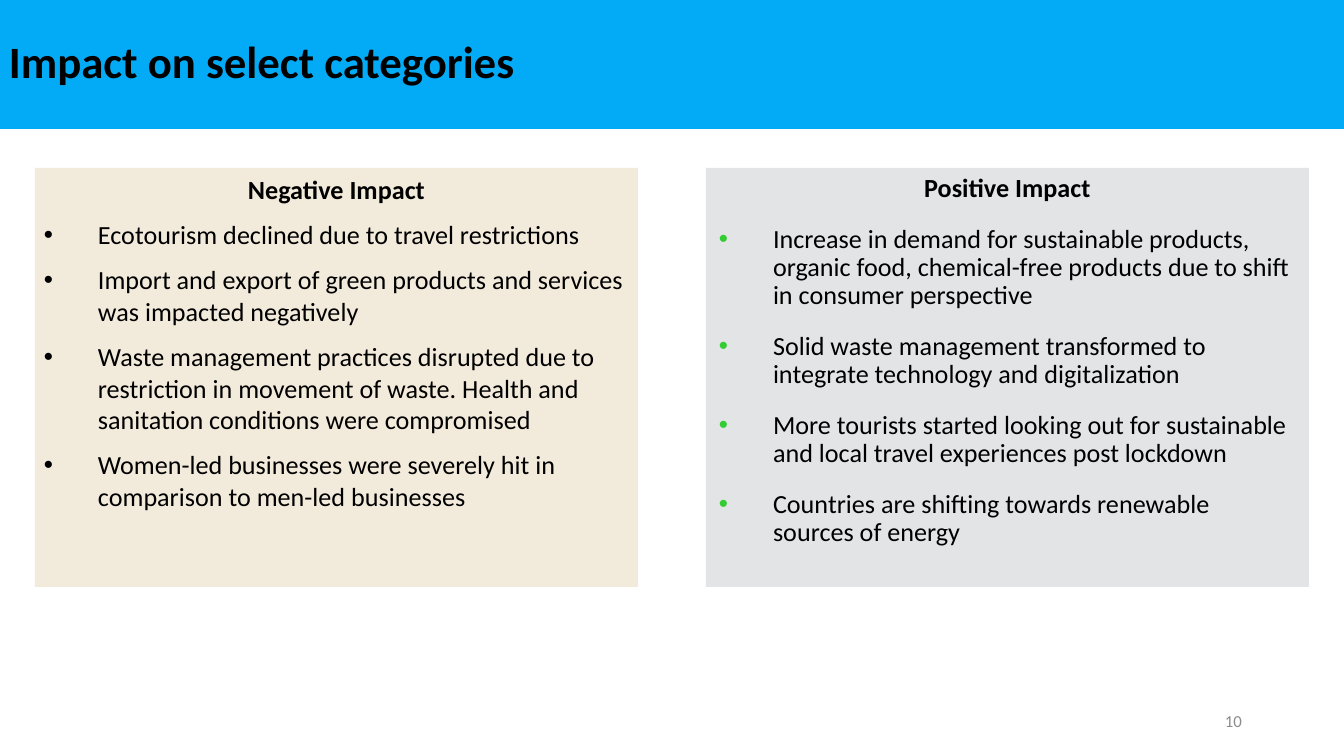
from dataclasses import dataclass

from lxml.etree import SubElement
from pptx import Presentation
from pptx.dml.color import RGBColor
from pptx.enum.shapes import MSO_SHAPE
from pptx.enum.text import MSO_ANCHOR, PP_ALIGN
from pptx.oxml.ns import qn
from pptx.util import Emu, Pt

SLIDE_W, SLIDE_H = 1344, 756
EMU_PER_PX = 9144000 / SLIDE_W


def px(length):
    return Emu(round(length * EMU_PER_PX))


@dataclass(frozen=True)
class Theme:
    font: str = "Calibri"
    title_size: int = 24
    body_size: int = 14
    number_size: int = 9
    ink: str = "000000"
    banner: str = "03ABF7"
    negative: str = "F2EADB"
    positive: str = "E2E4E5"
    accent: str = "33CC33"
    muted: str = "8C8C8C"


class SlideBuilder:
    NARROW = (9, 5)
    WIDE = (13, 7)
    HANG = 54

    def __init__(self, slide, theme):
        self.slide, self.theme = slide, theme

    def block(self, box, fill):
        """Add a plain filled rectangle."""
        rect = self.slide.shapes.add_shape(MSO_SHAPE.RECTANGLE, *map(px, box))
        rect.shadow.inherit = False
        rect.fill.solid()
        rect.fill.fore_color.rgb = RGBColor.from_string(fill)
        rect.line.fill.background()
        return rect

    def frame(self, shape, insets, anchor):
        side, edge = map(px, insets)
        layout = dict(word_wrap=True, vertical_anchor=anchor,
                      margin_left=side, margin_right=side,
                      margin_top=edge, margin_bottom=edge)
        for name, value in layout.items():
            setattr(shape.text_frame, name, value)
        return shape.text_frame

    def set_text(self, paragraph, text, size, color=None, bold=False, **layout):
        paragraph.text = text
        for name, value in layout.items():
            setattr(paragraph, name, value)
        font = paragraph.runs[0].font
        for name, value in dict(name=self.theme.font, size=Pt(size), bold=bold).items():
            setattr(font, name, value)
        font.color.rgb = RGBColor.from_string(color or self.theme.ink)

    def bullet(self, paragraph, color):
        props = paragraph._p.get_or_add_pPr()
        props.set("marL", str(px(self.HANG)))
        props.set("indent", str(-px(self.HANG)))
        bullet_color = SubElement(props, qn("a:buClr"))
        SubElement(bullet_color, qn("a:srgbClr"), val=color)
        SubElement(props, qn("a:buFont"), typeface="Arial")
        SubElement(props, qn("a:buChar"), char="•")

    def title(self, box, text):
        banner = self.block(box, self.theme.banner)
        frame = self.frame(banner, self.NARROW, MSO_ANCHOR.MIDDLE)
        self.set_text(frame.paragraphs[0], text, self.theme.title_size, bold=True,
                      alignment=PP_ALIGN.LEFT, line_spacing=0.9)

    def page_number(self, box, text):
        number = self.slide.shapes.add_textbox(*map(px, box))
        frame = self.frame(number, self.NARROW, MSO_ANCHOR.MIDDLE)
        self.set_text(frame.paragraphs[0], text, self.theme.number_size,
                      self.theme.muted, alignment=PP_ALIGN.RIGHT)

    def panel(self, box, fill, heading, points, insets, bullet_color,
              before, after=0, line_spacing=1.0):
        """Add a coloured panel with a centred heading and bullet points."""
        frame = self.frame(self.block(box, fill), insets, MSO_ANCHOR.TOP)
        size = self.theme.body_size
        spacing = dict(space_after=Pt(after), line_spacing=line_spacing)
        self.set_text(frame.paragraphs[0], heading, size, bold=True,
                      alignment=PP_ALIGN.CENTER, **spacing)
        for point in points:
            paragraph = frame.add_paragraph()
            self.bullet(paragraph, bullet_color)
            self.set_text(paragraph, point, size, alignment=PP_ALIGN.LEFT,
                          space_before=Pt(before), **spacing)


NEGATIVE_POINTS = [
    "Ecotourism declined due to travel restrictions",
    "Import and export of green products and services was impacted negatively",
    "Waste management practices disrupted due to restriction in movement of waste. "
    "Health and sanitation conditions were compromised",
    "Women-led businesses were severely hit in comparison to men-led businesses",
]
POSITIVE_POINTS = [
    "Increase in demand for sustainable products, organic food, "
    "chemical-free products due to shift in consumer perspective",
    "Solid waste management transformed to integrate technology and digitalization",
    "More tourists started looking out for sustainable and local travel "
    "experiences post lockdown",
    "Countries are shifting towards renewable sources of energy",
]


def main():
    deck = Presentation()
    deck.slide_width, deck.slide_height = px(SLIDE_W), px(SLIDE_H)
    theme = Theme()
    builder = SlideBuilder(deck.slides.add_slide(deck.slide_layouts[6]), theme)

    # Page number and title banner
    builder.page_number((949, 701, 302, 40), "10")
    builder.title((0, 0, SLIDE_W, 129), "Impact on select categories")

    # Two panels, mirrored about the slide's centre
    margin, top, width, height = 35, 168, 603, 419
    builder.panel((margin, top, width, height), theme.negative,
                  "Negative Impact", NEGATIVE_POINTS, builder.NARROW,
                  theme.ink, before=7.5)
    builder.panel((SLIDE_W - margin - width, top, width, height), theme.positive,
                  "Positive Impact", POSITIVE_POINTS, builder.WIDE,
                  theme.accent, before=6, after=6, line_spacing=0.9)

    deck.save("out.pptx")


if __name__ == "__main__":
    main()
